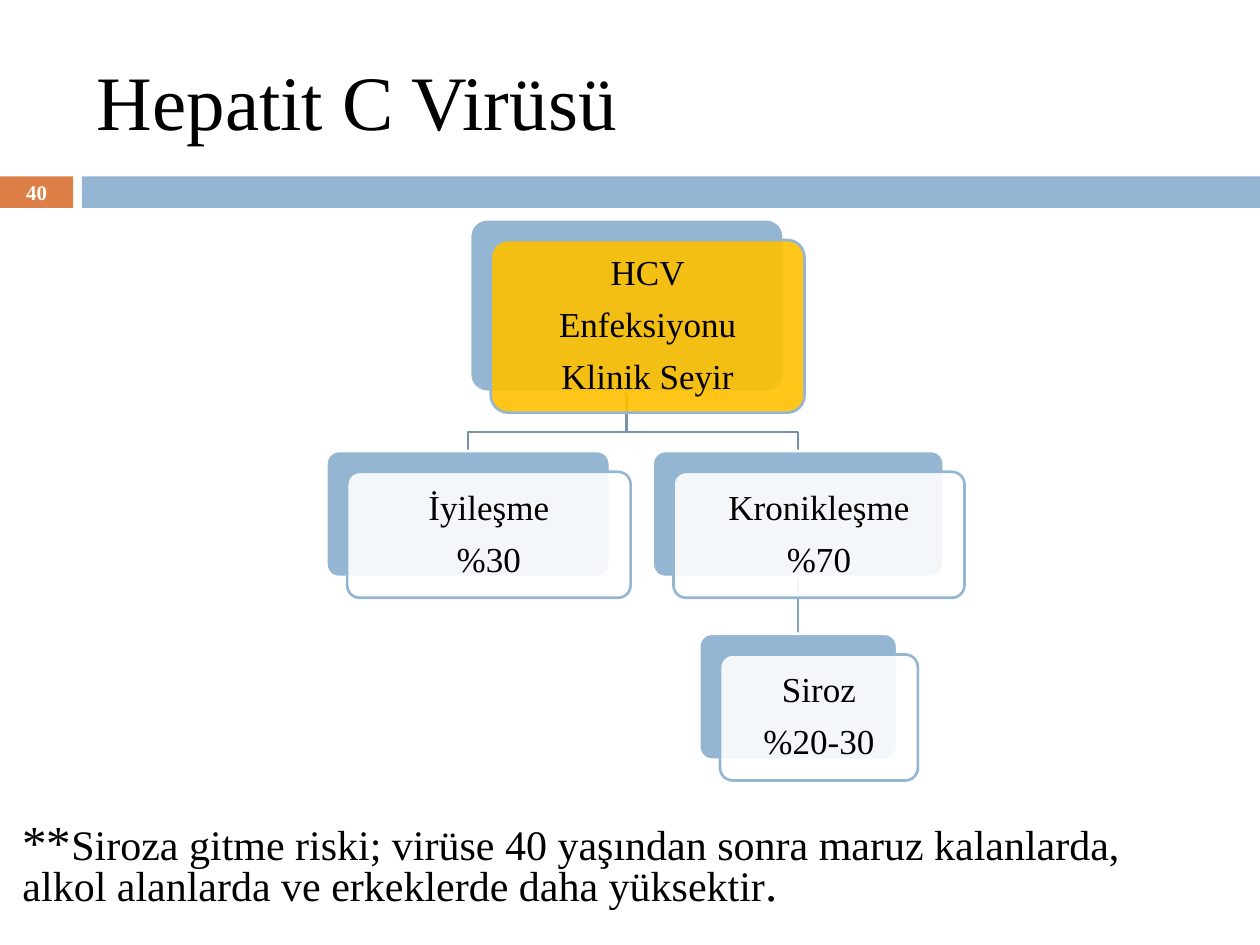
"""Build the hepatitis C slide: a heading band, a clinical course tree and a risk note."""
from lxml.etree import SubElement
from pptx import Presentation
from pptx.dml.color import RGBColor
from pptx.enum.shapes import MSO_CONNECTOR as Connector, MSO_SHAPE as Shape
from pptx.enum.text import MSO_ANCHOR as Anchor, PP_ALIGN as Align
from pptx.oxml.ns import qn
from pptx.util import Inches, Pt

CELL = Inches(0.1)
COLUMNS, ROWS = 100, 75
BLUE, ORANGE, GOLD, WHITE, BLACK = "94B6D2", "DD8047", "FFC000", "FFFFFF", "000000"
BRANCH, STEM = "7792A8", "86A5BF"
OFFSET = 1.65


def color(text):
    return RGBColor.from_string(text)


def add_run(paragraph, text, size, ink=BLACK, bold=False):
    run = paragraph.add_run()
    run.text = text
    run.font.name = "Times New Roman"
    run.font.size = Pt(size)
    run.font.bold = bold
    run.font.color.rgb = color(ink)


presentation = Presentation()
presentation.slide_width, presentation.slide_height = COLUMNS * CELL, ROWS * CELL
slide = presentation.slides.add_slide(presentation.slide_layouts[6])
shapes = slide.shapes

bands = []
for left, width, fill in [(0, 5.8, ORANGE), (6.5, 93.5, BLUE)]:
    band = shapes.add_shape(Shape.RECTANGLE, *(int(n * CELL) for n in (left, 14, width, 2.5)))
    band.shadow.inherit = False
    band.fill.solid()
    band.fill.fore_color.rgb = color(fill)
    band.line.fill.background()
    bands.append(band)

number = bands[0].text_frame
number.margin_left = number.margin_right = number.margin_top = number.margin_bottom = 0
number.vertical_anchor = Anchor.MIDDLE
number.paragraphs[0].alignment = Align.CENTER
add_run(number.paragraphs[0], "40", 11.9, WHITE, True)

title = shapes.add_textbox(*(int(n * CELL) for n in (6.7, 2.5, 89.2, 10.8))).text_frame
title.word_wrap = True
title.vertical_anchor = Anchor.MIDDLE
add_run(title.paragraphs[0], "Hepatit C Virüsü", 44)

note = shapes.add_textbox(*(int(n * CELL) for n in (0.8, 65.2, 99.2, 9.8))).text_frame
note.word_wrap = True
sentence = note.paragraphs[0]
sentence.line_spacing = 0.7
add_run(sentence, "**", 28)
add_run(sentence, "Siroza gitme riski; virüse 40 yaşından sonra maruz kalanlarda,", 24)
sentence.add_line_break()
add_run(sentence, "alkol alanlarda ve erkeklerde daha yüksektir", 24)
add_run(sentence, ".", 28)

cards = {
    "root": (37.3, 17.4, 24.9, 13.7, GOLD, ["HCV", "Enfeksiyonu", "Klinik Seyir"]),
    "recovery": (25.9, 35.8, 22.5, 10, WHITE, ["İyileşme", "%30"]),
    "chronic": (51.8, 35.8, 23.1, 10, WHITE, ["Kronikleşme", "%70"]),
    "cirrhosis": (55.5, 50.3, 15.7, 10, WHITE, ["Siroz", "%20-30"]),
}

stem = shapes.add_connector(Connector.STRAIGHT, 0, 0, 0, 0)
stem.line.color.rgb = color(STEM)
stem.line.width = Pt(1.5)
SubElement(stem._element.spPr, qn("a:effectLst"))

root_left, root_top, root_width, root_height = cards["root"][:4]
root_middle, root_bottom = root_left + root_width / 2, root_top + root_height
for child in ("chronic", "recovery"):
    left, top, width = cards[child][:3]
    middle, bend = left + width / 2, top - 1.5
    builder = shapes.build_freeform(root_middle, root_bottom, scale=CELL)
    builder = shapes.build_freeform(int(root_middle * CELL), int(root_bottom * CELL))
    corners = [(root_middle, bend), (middle, bend), (middle, top)]
    builder.add_line_segments([(int(x * CELL), int(y * CELL)) for x, y in corners], close=False)
    branch = builder.convert_to_shape()
    branch.shadow.inherit = False
    branch.fill.background()
    branch.line.color.rgb = color(BRANCH)
    branch.line.width = Pt(1.5)

backs = {}
for name, (left, top, width, height, face, lines) in cards.items():
    for shift, fill, edge in [(0, BLUE, WHITE), (OFFSET, face, BLUE)]:
        box = (left + shift, top + shift, width, height)
        card = shapes.add_shape(Shape.ROUNDED_RECTANGLE, *(int(n * CELL) for n in box))
        card.adjustments[0] = 0.1
        card.shadow.inherit = False
        card.fill.solid()
        card.fill.fore_color.rgb = color(fill)
        card.line.color.rgb = color(edge)
        card.line.width = Pt(1.5)
        if shift == 0:
            backs[name] = card
    tint = card._element.spPr.find(qn("a:solidFill"))[0]
    SubElement(tint, qn("a:alpha"), val="90000")
    frame = card.text_frame
    frame.word_wrap = True
    frame.vertical_anchor = Anchor.MIDDLE
    frame.margin_left = frame.margin_right = frame.margin_top = frame.margin_bottom = Inches(0.08)
    for index, line in enumerate(lines):
        paragraph = frame.add_paragraph() if index else frame.paragraphs[0]
        paragraph.alignment = Align.CENTER
        paragraph.line_spacing = 0.9
        paragraph.space_before = Pt(8 if index else 0)
        add_run(paragraph, line, 20)

stem.begin_connect(backs["chronic"], 2)
stem.end_connect(backs["cirrhosis"], 0)

presentation.save("out.pptx")
